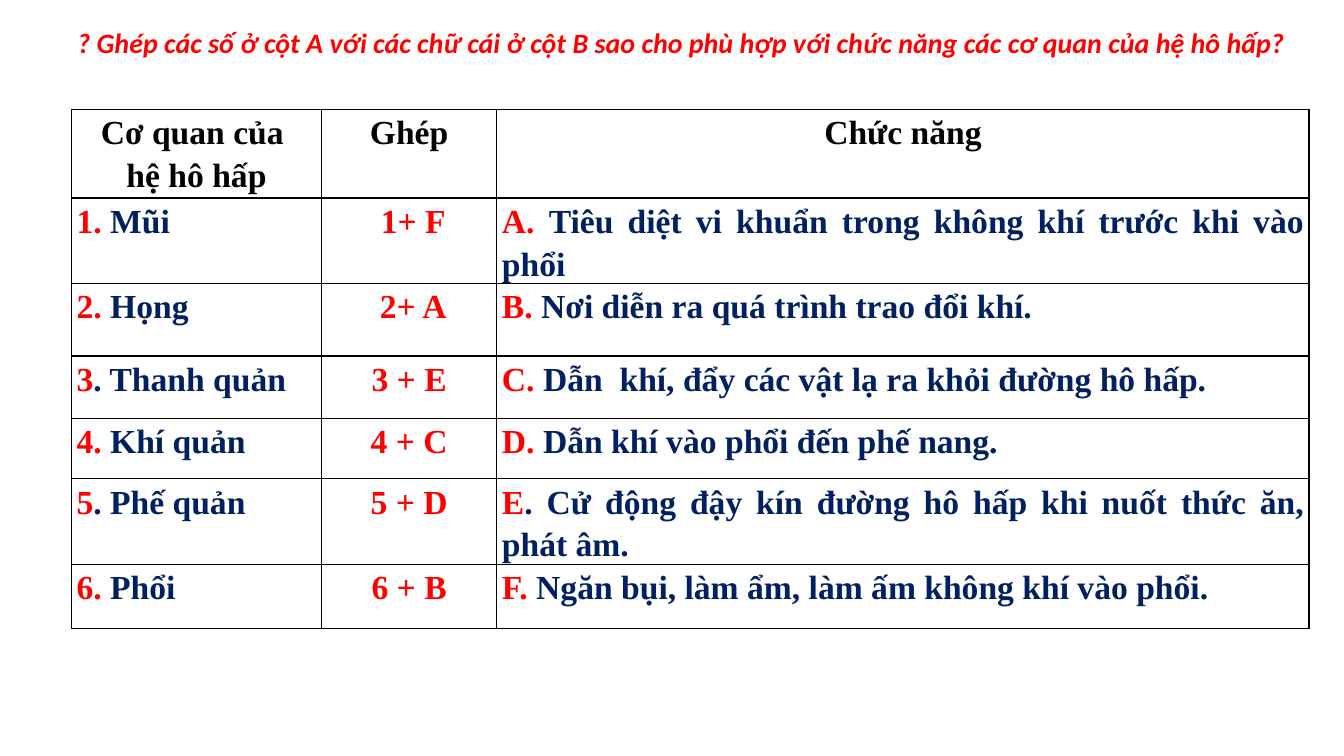
from lxml.etree import SubElement as Sub
from pptx import Presentation
from pptx.dml.color import RGBColor as Rgb
from pptx.enum.shapes import MSO_SHAPE as Geo
from pptx.enum.text import MSO_ANCHOR as Anchor, PP_ALIGN as Align
from pptx.oxml.ns import qn
from pptx.util import Cm, Pt

HUES = {"ink": "000000", "red": "FF0000", "navy": "002060", "white": "FFFFFF"}
TITLE = ("? Ghép các số ở cột A với các chữ cái ở cột B sao cho phù hợp "
         "với chức năng các cơ quan của hệ hô hấp?")
HEADS = [["Cơ quan của ", "hệ hô hấp"], ["Ghép"], ["Chức năng"]]
ROWS = [
    (("1. ", "Mũi"), " 1+ F",
     ("A. ", "Tiêu diệt vi khuẩn trong không khí trước khi vào phổi")),
    (("2. ", "Họng"), " 2+ A", ("B. ", "Nơi diễn ra quá trình trao đổi khí.")),
    (("3", ". Thanh quản"), "3 + E",
     ("C. ", "Dẫn  khí, đẩy các vật lạ ra khỏi đường hô hấp.")),
    (("4. ", "Khí quản"), "4 + C", ("D. ", "Dẫn khí vào phổi đến phế nang.")),
    (("5", ". Phế quản"), "5 + D",
     ("E", ". Cử động đậy kín đường hô hấp khi nuốt thức ăn, phát âm.")),
    (("6. ", "Phổi"), "6 + B",
     ("F. ", "Ngăn bụi, làm ẩm, làm ấm không khí vào phổi.")),
]
WIDTHS = [6.3, 4.42, 20.47]
HEIGHTS = [2.24, 1.75, 1.83, 1.57, 1.52, 1.09, 1.63]


def tint(hue):
    return Rgb.from_string(HUES[hue])


def write(frame, paras, font="Times New Roman", size=24, align=Align.CENTER,
          gap=1.15, slant=False):
    for i, parts in enumerate(paras):
        para = frame.add_paragraph() if i else frame.paragraphs[0]
        para.alignment, para.line_spacing = align, gap
        for text, hue in parts:
            run = para.add_run()
            run.text = text
            face = run.font
            face.name, face.size = font, Pt(size)
            face.bold, face.italic = True, slant
            face.color.rgb = tint(hue)


class Sheet:
    """Draws styled elements on one slide."""

    def __init__(self, slide, rule=1):
        self.slide, self.rule = slide, rule

    def title(self, text, x, y, w, h):
        box = self.slide.shapes.add_shape(Geo.RECTANGLE, Cm(x), Cm(y), Cm(w), Cm(h))
        box.shadow.inherit = False
        box.fill.solid()
        box.fill.fore_color.rgb = tint("white")
        box.line.fill.background()
        frame = box.text_frame
        frame.word_wrap, frame.vertical_anchor = True, Anchor.TOP
        write(frame, [[(text, "red")]], font="Calibri", size=20,
              align=Align.LEFT, gap=1.0, slant=True)

    def grid(self, x, y, widths, heights):
        table = self.slide.shapes.add_table(
            len(heights), len(widths), Cm(x), Cm(y),
            Cm(sum(widths)), Cm(sum(heights))).table
        table.first_row = table.horz_banding = False
        for col, w in zip(table.columns, widths):
            col.width = Cm(w)
        for row, h in zip(table.rows, heights):
            row.height = Cm(h)
        return table

    def cell(self, cell, paras, align=Align.CENTER):
        cell.margin_left = cell.margin_right = Cm(0.13)
        cell.margin_top = cell.margin_bottom = 0
        props = cell._tc.get_or_add_tcPr()
        for side in ("a:lnL", "a:lnR", "a:lnT", "a:lnB"):
            line = Sub(props, qn(side), w=str(Pt(self.rule)))
            Sub(Sub(line, qn("a:solidFill")), qn("a:srgbClr"), val=HUES["ink"])
        cell.fill.solid()
        cell.fill.fore_color.rgb = tint("white")
        write(cell.text_frame, paras, align=align)


def main():
    deck = Presentation()
    deck.slide_width, deck.slide_height = Cm(33.87), Cm(19.05)
    sheet = Sheet(deck.slides.add_slide(deck.slide_layouts[6]))
    table = sheet.grid(1.8, 2.75, WIDTHS, HEIGHTS)
    for c, lines in enumerate(HEADS):
        sheet.cell(table.cell(0, c), [[(line, "ink")] for line in lines])
    for r, (organ, match, role) in enumerate(ROWS, 1):
        sheet.cell(table.cell(r, 1), [[(match, "red")]])
        for c, (mark, text) in ((0, organ), (2, role)):
            sheet.cell(table.cell(r, c), [[(mark, "red"), (text, "navy")]],
                       align=Align.JUSTIFY)
    sheet.title(TITLE, 1.7, 0.51, 31.55, 1.12)
    deck.save("out.pptx")


if __name__ == "__main__":
    main()
